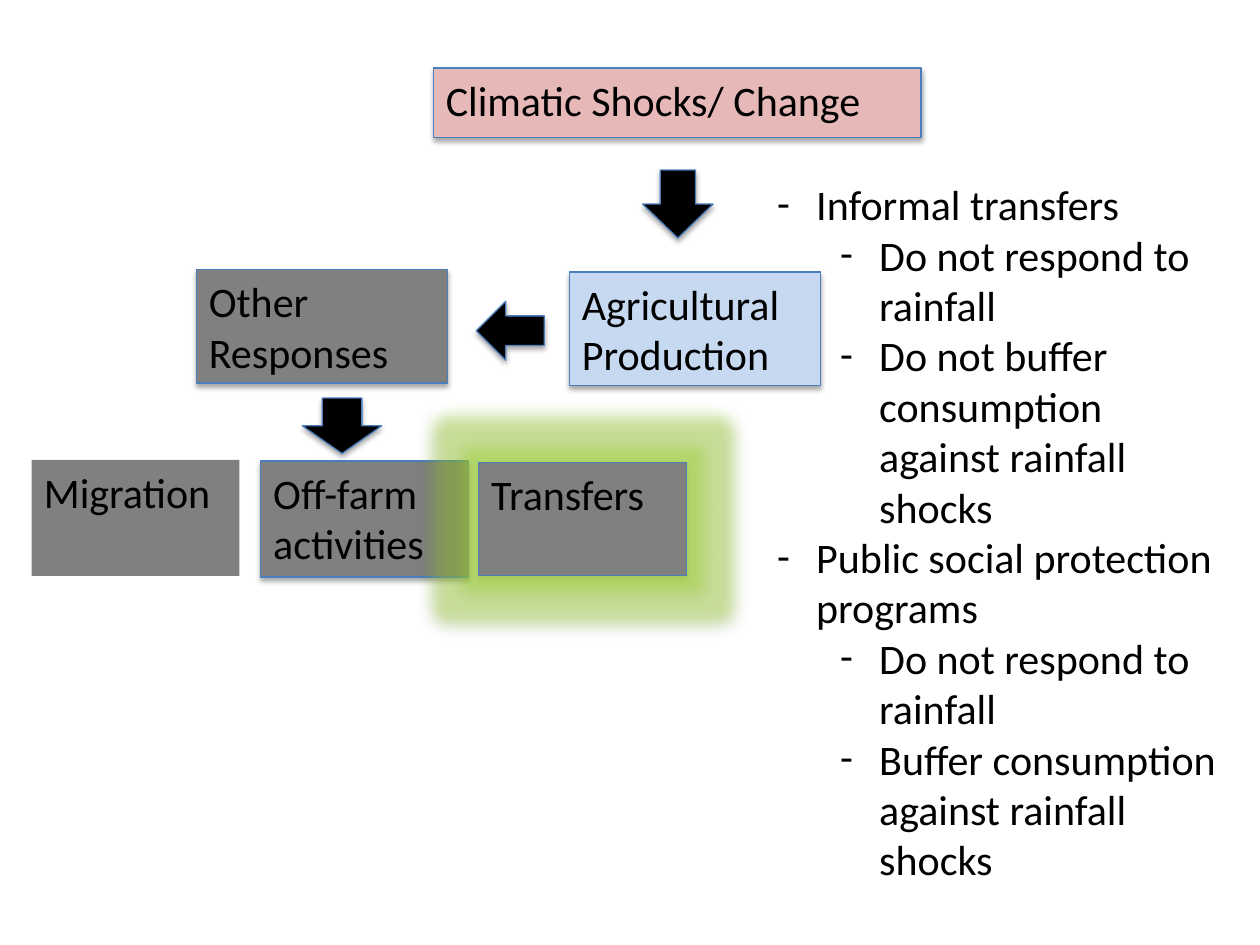
from lxml import etree
from pptx import Presentation
from pptx.dml.color import RGBColor
from pptx.enum.shapes import MSO_SHAPE as Shape
from pptx.enum.text import MSO_ANCHOR as Anchor, MSO_AUTO_SIZE as AutoSize, PP_ALIGN as Align
from pptx.oxml.ns import qn
from pptx.util import Inches, Pt

BLACK = RGBColor(0x00, 0x00, 0x00)
GRAY = RGBColor(0x80, 0x80, 0x80)
PINK = RGBColor(0xE6, 0xB9, 0xB8)
PALE_BLUE = RGBColor(0xC6, 0xD9, 0xF1)
BLUE = RGBColor(0x4B, 0x7E, 0xBC)
GLOW = RGBColor(0xA7, 0xDF, 0x34)


def add_effect(shape, tag, color, alpha, **sizes):
    """Add a glow or shadow to the shape's effect list."""
    effects = shape._element.spPr.find(qn("a:effectLst"))
    effect = etree.SubElement(effects, qn(tag), {k: str(v) for k, v in sizes.items()})
    tint = etree.SubElement(effect, qn("a:srgbClr"), val=str(color))
    etree.SubElement(tint, qn("a:alpha"), val=str(alpha * 1000))


def style_text(para):
    para.alignment = Align.LEFT
    for span in para.runs:
        span.font.name = "Calibri"
        span.font.size = Pt(24)
        span.font.color.rgb = BLACK


deck = Presentation()
deck.slide_width, deck.slide_height = Inches(10), Inches(7.5)
page = deck.slides.add_slide(deck.slide_layouts[6])

# Flow chart: kind, position and size, fill, label
flow = [
    (Shape.RECTANGLE, (4.52, 2.16, 1.99, 0.9), PALE_BLUE, "Agricultural Production"),
    (Shape.RECTANGLE, (3.44, 0.54, 3.87, 0.55), PINK, "Climatic Shocks/ Change"),
    (Shape.DOWN_ARROW, (5.1, 1.35, 0.56, 0.54), BLACK, ""),
    (Shape.RECTANGLE, (1.56, 2.14, 1.99, 0.9), GRAY, "Other Responses"),
    (Shape.DOWN_ARROW, (2.4, 3.16, 0.63, 0.44), BLACK, ""),
    (Shape.RECTANGLE, (0.25, 3.65, 1.65, 0.92), GRAY, "Migration"),
    (Shape.RECTANGLE, (2.07, 3.66, 1.65, 0.92), GRAY, "Off-farm activities"),
    (Shape.RECTANGLE, (3.8, 3.67, 1.65, 0.9), GRAY, "Transfers"),
    (Shape.LEFT_ARROW, (3.78, 2.39, 0.54, 0.47), BLACK, ""),
]
for kind, place, fill, label in flow:
    box = page.shapes.add_shape(kind, *map(Inches, place))
    box.fill.solid()
    box.fill.fore_color.rgb = fill
    box.shadow.inherit = False
    if label == "Migration":
        box.line.fill.background()
    else:
        box.line.color.rgb = BLUE
        box.line.width = Pt(0.75)
        if label == "Transfers":
            add_effect(box, "a:glow", GLOW, 40, rad=Inches(0.25))
        add_effect(box, "a:outerShdw", BLACK, 35, blurRad=Pt(3.1), dist=Pt(1.8),
                   dir=90 * 60000, rotWithShape=0)
    if label:
        box.text_frame.text = label
        box.text_frame.word_wrap = True
        box.text_frame.vertical_anchor = Anchor.TOP
        style_text(box.text_frame.paragraphs[0])

# Findings: level and text of each dashed item
findings = [
    (0, "Informal transfers"),
    (1, "Do not respond to rainfall"),
    (1, "Do not buffer consumption against rainfall shocks"),
    (0, "Public social protection programs"),
    (1, "Do not respond to rainfall"),
    (1, "Buffer consumption against rainfall shocks"),
]
box = page.shapes.add_textbox(Inches(6.07), Inches(1.37), Inches(3.76), Inches(6.16))
frame = box.text_frame
frame.word_wrap = True
frame.auto_size = AutoSize.SHAPE_TO_FIT_TEXT
frame.text = "\n".join(text for level, text in findings)
for para, (level, text) in zip(frame.paragraphs, findings):
    style_text(para)
    para.level = level
    props = para._p.get_or_add_pPr()
    props.set("marL", str(Inches(0.31 + 0.5 * level)))
    props.set("indent", str(Inches(-0.31)))
    etree.SubElement(props, qn("a:buFont"), typeface="Calibri")
    etree.SubElement(props, qn("a:buChar"), char="-")

deck.save("out.pptx")
